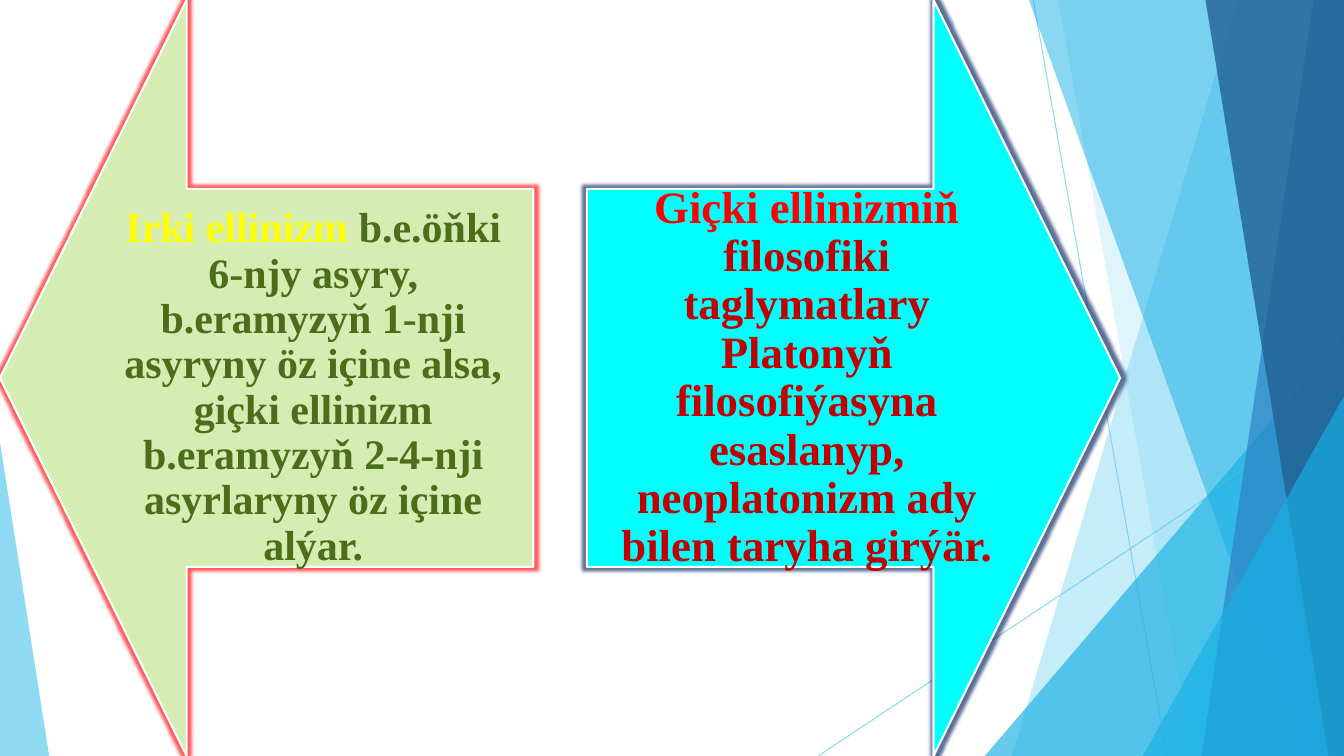
from lxml import etree
from pptx import Presentation
from pptx.dml.color import RGBColor
from pptx.enum.shapes import MSO_CONNECTOR, MSO_SHAPE
from pptx.enum.text import MSO_ANCHOR, PP_ALIGN
from pptx.oxml.ns import qn
from pptx.util import Cm, Pt

LINE = MSO_CONNECTOR.STRAIGHT
TRIANGLE = MSO_SHAPE.ISOSCELES_TRIANGLE
LEFT, RIGHT = MSO_SHAPE.LEFT_ARROW, MSO_SHAPE.RIGHT_ARROW
MIDDLE, CENTER = MSO_ANCHOR.MIDDLE, PP_ALIGN.CENTER

SKY = RGBColor(0x5F, 0xCB, 0xEF)
AZURE = RGBColor(0x17, 0xB0, 0xE4)
BLUE = RGBColor(0x2E, 0x83, 0xC3)
NAVY = RGBColor(0x22, 0x62, 0x92)
WHITE = RGBColor(0xFF, 0xFF, 0xFF)
LIME = RGBColor(0xD5, 0xED, 0xB3)
CYAN = RGBColor(0x00, 0xFF, 0xFF)
YELLOW = RGBColor(0xFF, 0xFF, 0x00)
GREEN = RGBColor(0x4C, 0x6E, 0x1B)
RED = RGBColor(0xFF, 0x00, 0x00)
DARK_RED = RGBColor(0xC0, 0x00, 0x00)
INDIGO = RGBColor(0x00, 0x20, 0x60)

WIDE, HIGH = 33.87, 19.05


def fade(node, share):
    """Make the first colour under node opaque by share percent."""
    color = next(node.iter(qn("a:srgbClr")))
    etree.SubElement(color, qn("a:alpha")).set("val", str(share * 1000))


deck = Presentation()
deck.slide_width, deck.slide_height = Cm(WIDE), Cm(HIGH)
slide = deck.slides.add_slide(deck.slide_layouts[6])
shapes = slide.shapes

# Thin lines behind the facets
for x1, y1, x2, y2 in [(26.04, 0, 29.41, HIGH), (WIDE, 10.24, 20.62, HIGH)]:
    ray = shapes.add_connector(LINE, Cm(x1), Cm(y1), Cm(x2), Cm(y2))
    ray.line.color.rgb = SKY
    ray.line.width = Pt(0.75)
    props = ray._element.spPr
    fade(props, 70)
    etree.SubElement(props, qn("a:effectLst"))

# Bands: top and foot of the slanted edge; triangles: left, top, width, apex
facets = [
    ((31.19, 25.5), SKY, 36),
    ((26.67, 30.05), SKY, 20),
    ((24.82, 8.46, 9.05, 1), AZURE, 66),
    ((25.93, 32.79), AZURE, 50),
    ((33.1, 30.28), BLUE, 70),
    ((30.38, 33.48), NAVY, 80),
    ((28.8, 9.98, 5.07, 1), AZURE, 66),
    ((0, 11.15, 1.24, 0), SKY, 70),
]
for form, color, share in facets:
    if len(form) == 2:
        top, foot = form
        pen = shapes.build_freeform(Cm(top), 0)
        pen.add_line_segments(
            [(Cm(WIDE), 0), (Cm(WIDE), Cm(HIGH)), (Cm(foot), Cm(HIGH))])
        facet = pen.convert_to_shape()
    else:
        x, y, width, apex = form
        facet = shapes.add_shape(
            TRIANGLE, Cm(x), Cm(y), Cm(width), Cm(HIGH - y))
        facet.adjustments[0] = apex
    facet.fill.solid()
    facet.fill.fore_color.rgb = color
    fade(facet._element.spPr, share)
    facet.line.fill.background()
    facet.shadow.inherit = False

# Arrows: kind, left, fill, glow, size, side inset, drop of the text, runs
arrows = [
    (LEFT, 0, LIME, RED, 30, 0.58, 0.25, [
        ("Irki ellinizm ", YELLOW),
        ("b.e.öňki 6-njy asyry, b.eramyzyň 1-nji asyryny öz içine alsa, "
         "giçki ellinizm b.eramyzyň 2-4-nji asyrlaryny öz içine alýar.",
         GREEN)]),
    (RIGHT, 14.79, CYAN, INDIGO, 32, 0.64, 0, [
        ("Giçki ellinizmiň ", RED),
        ("filosofiki taglymatlary Platonyň filosofiýasyna esaslanyp, "
         "neoplatonizm ady bilen taryha girýär.", DARK_RED)]),
]
for kind, x, color, halo, size, inset, drop, words in arrows:
    arrow = shapes.add_shape(kind, Cm(x), 0, Cm(13.44), Cm(HIGH))
    arrow.adjustments[0] = 0.5
    arrow.adjustments[1] = 0.35
    arrow.fill.solid()
    arrow.fill.fore_color.rgb = color
    arrow.line.color.rgb = WHITE
    arrow.line.width = Pt(1.5)
    arrow.shadow.inherit = False
    effects = arrow._element.spPr.find(qn("a:effectLst"))
    glow = etree.SubElement(effects, qn("a:glow"), rad=str(Pt(5)))
    etree.SubElement(glow, qn("a:srgbClr"), val=str(halo))
    fade(glow, 65)

    frame = arrow.text_frame
    frame.word_wrap = True
    frame.vertical_anchor = MIDDLE
    frame.margin_left = frame.margin_right = Cm(inset)
    frame.margin_top = Cm(inset + drop)
    frame.margin_bottom = Cm(inset - drop)
    para = frame.paragraphs[0]
    para.alignment = CENTER
    para.line_spacing = 0.9
    for text, tone in words:
        run = para.add_run()
        run.text = text
        run.font.name = "Times New Roman"
        run.font.size = Pt(size)
        run.font.bold = True
        run.font.color.rgb = tone

deck.save("out.pptx")
